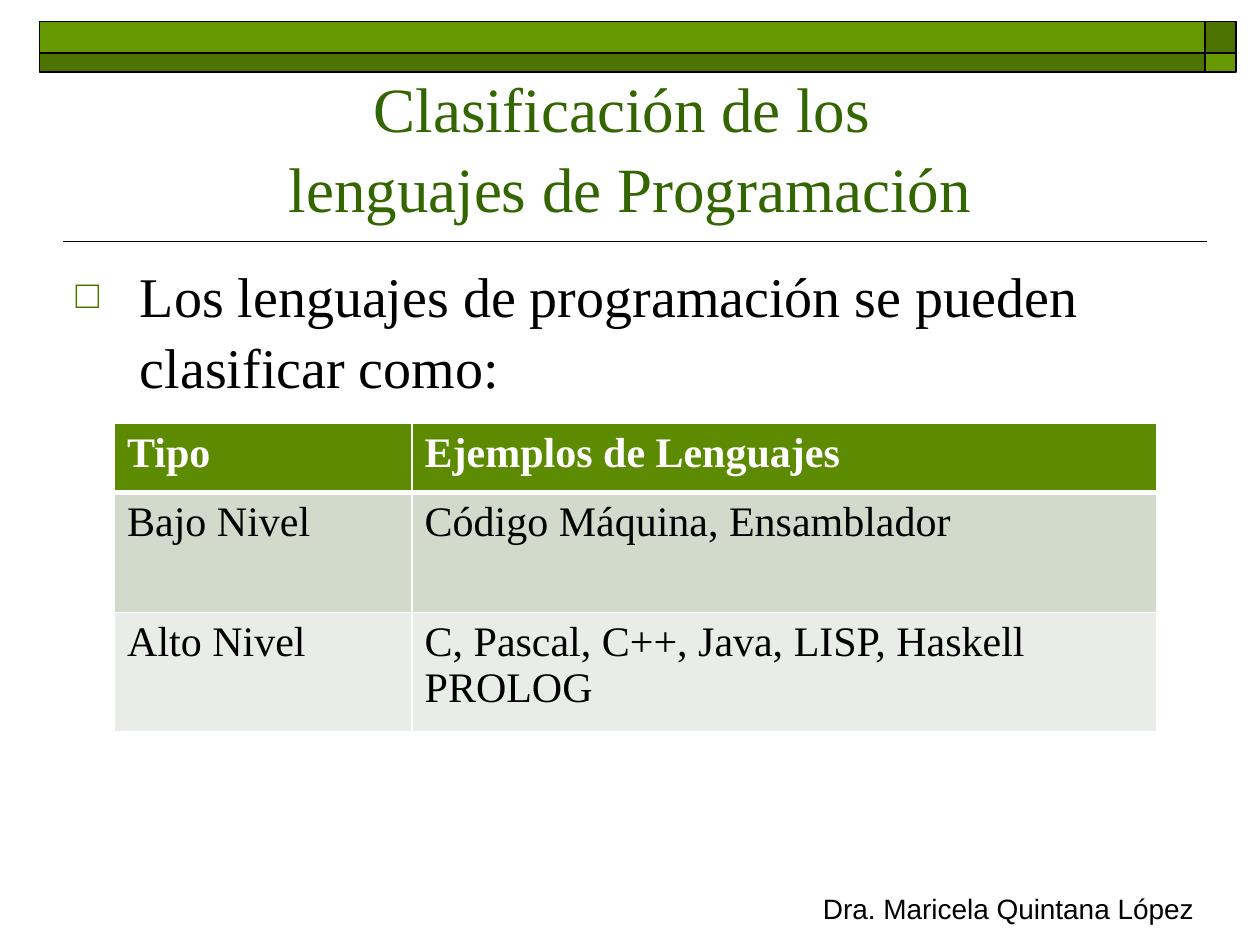
from dataclasses import dataclass

from lxml import etree
from pptx import Presentation
from pptx.dml.color import RGBColor
from pptx.enum import shapes, text
from pptx.oxml import ns
from pptx.util import Pt


@dataclass(frozen=True)
class Theme:
    green: str = "669900"
    dark_green: str = "4C7200"
    title_green: str = "336600"
    header_green: str = "5C8A00"
    row_fills: tuple = ("D2DACC", "EAEDE7")
    black: str = "000000"
    white: str = "FFFFFF"
    serif: str = "Times New Roman"
    sans: str = "Arial"
    title_size: int = 36
    body_size: int = 32
    table_size: int = 24
    footer_size: int = 16


T = Theme()
ROWS = [
    ("Tipo", "Ejemplos de Lenguajes"),
    ("Bajo Nivel", "Código Máquina, Ensamblador"),
    ("Alto Nivel", "C, Pascal, C++, Java, LISP, Haskell PROLOG"),
]


def rgb(color):
    return RGBColor.from_string(color)


def add_xml(parent, tag, **attrs):
    return etree.SubElement(parent, ns.qn(tag), attrs)


def place(sp, left, top, width, height):
    sp.left, sp.top, sp.width, sp.height = map(Pt, (left, top, width, height))


def write(tf, words, size, color, font=T.serif, bold=False, align=None):
    tf.text = words
    p = tf.paragraphs[0]
    p.alignment = align
    for r in p.runs:
        r.font.name, r.font.size, r.font.bold = font, Pt(size), bold
        r.font.color.rgb = rgb(color)
    return p


def add_band(s):
    """Checkered band: two columns by two rows in alternating greens."""
    top = 12.25
    for row, height in enumerate((18, 11)):
        left = 22.5
        for col, width in enumerate((666, 18)):
            sp = s.shapes.add_shape(shapes.MSO_SHAPE.RECTANGLE,
                                    Pt(left), Pt(top), Pt(width), Pt(height))
            sp.shadow.inherit = False
            sp.fill.solid()
            sp.fill.fore_color.rgb = rgb((T.green, T.dark_green)[(row + col) % 2])
            sp.line.color.rgb = rgb(T.black)
            sp.line.width = Pt(1)
            left += width
        top += height


def add_rule(s):
    line = s.shapes.add_connector(shapes.MSO_CONNECTOR.STRAIGHT,
                                  Pt(36), Pt(138), Pt(690), Pt(138))
    line.line.color.rgb = rgb(T.black)
    line.line.width = Pt(1)
    add_xml(line._element.spPr, "a:effectLst")


def fill_title(s):
    sp = s.shapes.title
    place(sp, 36, 42, 648, 90)
    tf = sp.text_frame
    tf.auto_size = text.MSO_AUTO_SIZE.NONE
    tf.vertical_anchor = text.MSO_ANCHOR.BOTTOM
    p = write(tf, "Clasificación de los \vlenguajes de Programación",
              T.title_size, T.title_green, align=text.PP_ALIGN.CENTER)
    p.line_spacing = 1.05


def fill_body(s):
    sp = s.placeholders[1]
    place(sp, 36, 144, 648, 338.4)
    tf = sp.text_frame
    tf.auto_size = text.MSO_AUTO_SIZE.NONE
    p = write(tf, "Los lenguajes de programación se pueden clasificar como:",
              T.body_size, T.black)
    p.line_spacing = 1.05
    # Hollow square bullet with a hanging indent
    props = p._p.get_or_add_pPr()
    props.set("marL", str(Pt(36.75)))
    props.set("indent", str(-Pt(36.75)))
    add_xml(add_xml(props, "a:buClr"), "a:srgbClr", val=T.dark_green)
    add_xml(props, "a:buSzPct", val="70000")
    add_xml(props, "a:buFont", typeface=T.sans)
    add_xml(props, "a:buChar", char="□")


def set_borders(cell, top, bottom):
    props = cell._tc.get_or_add_tcPr()
    for side, width in (("L", 1), ("R", 1), ("T", top), ("B", bottom)):
        line = add_xml(props, f"a:ln{side}", w=str(Pt(width)))
        add_xml(add_xml(line, "a:solidFill"), "a:srgbClr", val=T.white)


def add_language_table(s):
    widths, heights = (170, 425.5), (39.6, 68.4, 68.4)
    table = s.shapes.add_table(len(heights), len(widths), Pt(65.5), Pt(242),
                               Pt(sum(widths)), Pt(sum(heights))).table
    for column, width in zip(table.columns, widths):
        column.width = Pt(width)
    for i, (height, words) in enumerate(zip(heights, ROWS)):
        table.rows[i].height = Pt(height)
        header = i == 0
        for cell, word in zip(table.rows[i].cells, words):
            write(cell.text_frame, word, T.table_size,
                  T.white if header else T.black, bold=header)
            set_borders(cell, top=3 if i == 1 else 1, bottom=3 if header else 1)
            cell.fill.solid()
            cell.fill.fore_color.rgb = rgb(
                T.header_green if header else T.row_fills[i - 1])


def add_footer(s):
    sp = s.shapes.add_textbox(Pt(462), Pt(506), Pt(228.5), Pt(36))
    sp.text_frame.word_wrap = True
    write(sp.text_frame, "Dra. Maricela Quintana López", T.footer_size,
          T.black, font=T.sans, align=text.PP_ALIGN.CENTER)


def main():
    prs = Presentation()
    prs.slide_width, prs.slide_height = Pt(720), Pt(540)
    s = prs.slides.add_slide(prs.slide_layouts[1])
    # Frame
    add_rule(s)
    add_band(s)
    add_footer(s)
    # Content
    fill_title(s)
    fill_body(s)
    add_language_table(s)
    prs.save("out.pptx")


if __name__ == "__main__":
    main()
